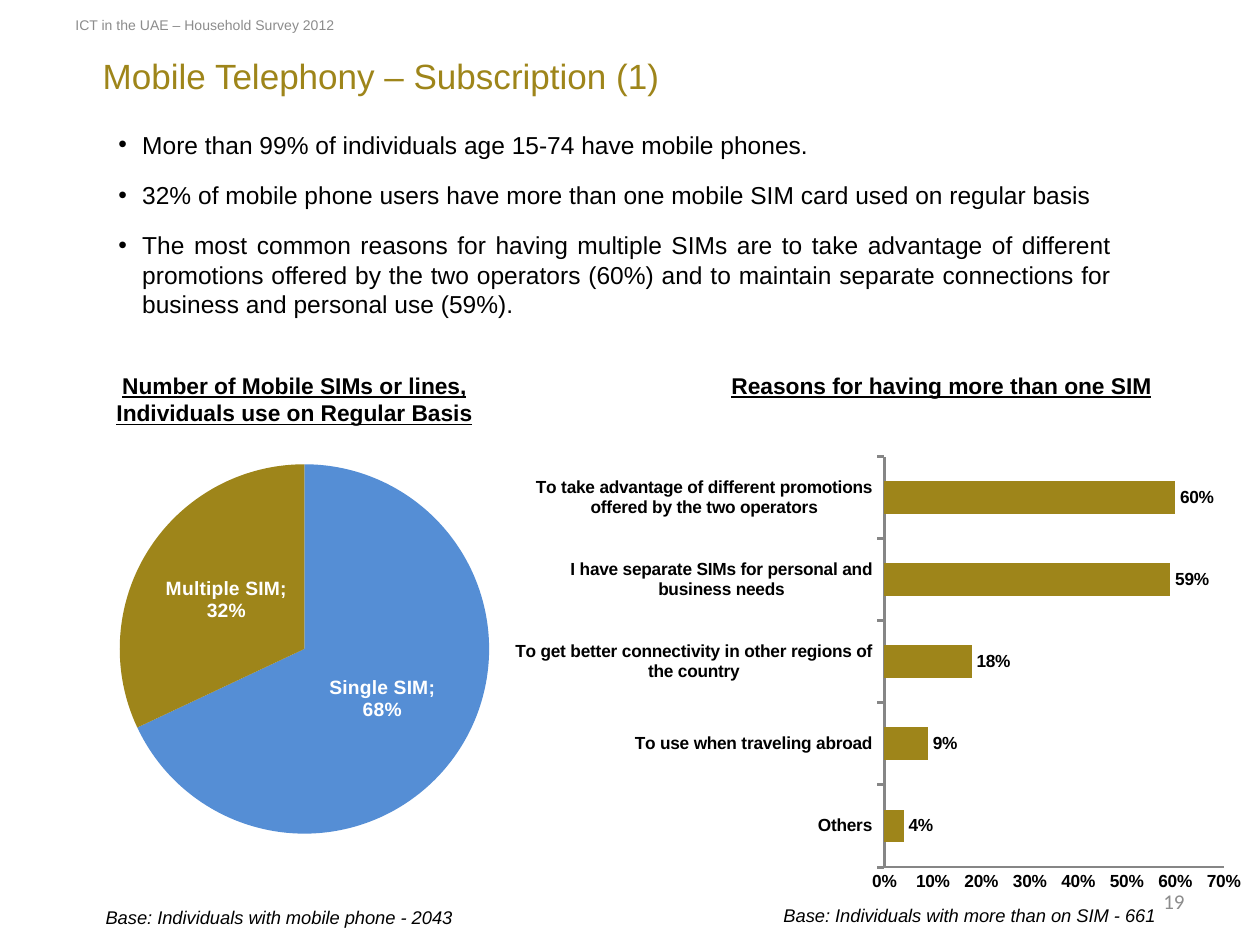
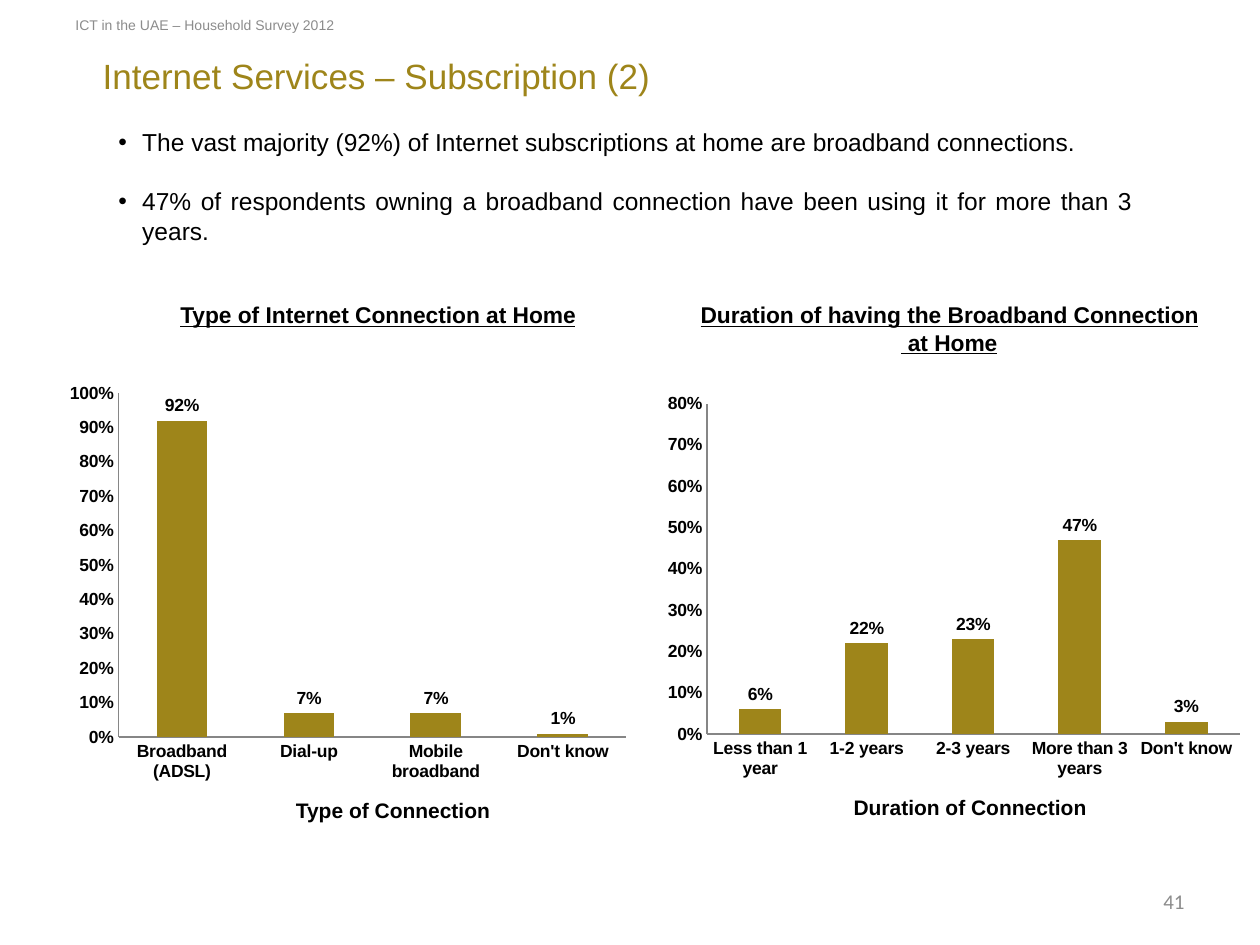
"""Build two survey slides on mobile and Internet subscriptions."""
from pptx import Presentation
from pptx import util as u
from pptx.chart.data import CategoryChartData
from pptx.dml.color import RGBColor
from pptx.enum import chart as ch, text as tx
from pptx.oxml import ns, xmlchemy as xc

GOLD, BLUE, GREY, AXIS = "9E851A", "558ED5", "8C8C8C", "868686"
BLACK, WHITE = "000000", "FFFFFF"
COLS, ROWS = 100, 75
LEFT, MID, RIGHT, FULL = (tx.PP_ALIGN.LEFT, tx.PP_ALIGN.CENTER,
                          tx.PP_ALIGN.RIGHT, tx.PP_ALIGN.JUSTIFY)
HEAD = dict(size=13, bold=True, line=True, align=MID)
NAME = dict(size=12, bold=True, align=MID)
BASE = dict(size=10.5, ital=True)


def rgb(code):
    """Turn a hex string into a colour."""
    return RGBColor.from_string(code)


def node(tag, **attrs):
    """Make an XML element with attributes."""
    item = xc.OxmlElement(tag)
    for key, val in attrs.items():
        item.set(key, str(val))
    return item


def style(font, size, color=BLACK, bold=False, face="Arial"):
    """Format a font."""
    font.name, font.size, font.bold = face, u.Pt(size), bold
    font.color.rgb = rgb(color)


def write(frame, lines, size=14, color=BLACK, bold=False, ital=False, line=False,
          face="Arial", align=LEFT, mid=False, bullet=False, after=0):
    """Fill a text frame with formatted paragraphs."""
    frame.word_wrap = True
    frame.vertical_anchor = tx.MSO_ANCHOR.MIDDLE if mid else tx.MSO_ANCHOR.TOP
    for i, words in enumerate(lines):
        para = frame.add_paragraph() if i else frame.paragraphs[0]
        if bullet:
            prop = para._p.get_or_add_pPr()
            dent = u.Inches(0.19)
            prop.set("marL", str(dent))
            prop.set("indent", str(-dent))
            prop.append(node("a:buFont", typeface="Arial"))
            prop.append(node("a:buChar", char="•"))
        para.alignment, para.space_before = align, u.Pt(0)
        para.space_after = u.Pt(after)
        run = para.add_run()
        run.text = words
        style(run.font, size, color, bold, face)
        run.font.italic, run.font.underline = ital, line


class Deck:
    """Hold the shared style and the current slide."""

    def __init__(self):
        """Start an empty deck."""
        self.show = Presentation()
        self.show.slide_width, self.show.slide_height = u.Inches(10), u.Inches(7.5)

    def place(self, col, row, wide, high):
        """Turn grid cells into slide lengths."""
        dx, dy = self.show.slide_width / COLS, self.show.slide_height / ROWS
        return [u.Emu(round(n)) for n in (col * dx, row * dy, wide * dx, high * dy)]

    def page(self, title, number):
        """Add a slide with its title, header and number."""
        self.slide = self.show.slides.add_slide(self.show.slide_layouts[5])
        head = self.slide.shapes.title
        head.left, head.top, head.width, head.height = self.place(7.15, 3.5, 80.9, 5)
        write(head.text_frame, [title], size=20, color=GOLD, mid=True)
        self.text((71.7, 69.5, 23.3, 4), number, size=12, color=GREY,
                  face="Calibri", align=RIGHT, mid=True)
        self.text((5, 0, 52.5, 4), "ICT in the UAE – Household Survey 2012",
                  size=8, color=GREY, mid=True)

    def text(self, spot, *lines, **form):
        """Add a text box."""
        box = self.slide.shapes.add_textbox(*self.place(*spot))
        write(box.text_frame, lines, **form)

    def list(self, spot, *lines, after):
        """Add a justified bullet list."""
        self.text(spot, *lines, align=FULL, bullet=True, after=after)

    def chart(self, kind, spot, inner, data):
        """Add a one-series chart with a fixed plot area and labels."""
        table = CategoryChartData(number_format="0%")
        table.categories = list(data)
        table.add_series("Share", list(data.values()))
        chart = self.slide.shapes.add_chart(kind, *self.place(*spot), table).chart
        chart.has_legend = chart.has_title = False
        style(chart.font, 10, bold=True)
        area = chart._chartSpace.chart.plotArea
        for old in area.findall(ns.qn("c:layout")):
            area.remove(old)
        frame, plan = node("c:layout"), node("c:manualLayout")
        frame.append(plan)
        plan.append(node("c:layoutTarget", val="inner"))
        for tag in ("xMode", "yMode"):
            plan.append(node("c:" + tag, val="edge"))
        for tag, val in zip("xywh", inner):
            plan.append(node("c:" + tag, val=val))
        area.insert(0, frame)
        plot = chart.plots[0]
        plot.vary_by_categories = False
        plot.has_data_labels = True
        tags = plot.data_labels
        tags.show_value = True
        tags.number_format, tags.number_format_is_linked = "0%", False
        style(tags.font, 10, bold=True)
        return chart

    def pie(self, spot, inner, data, hues):
        """Add a pie chart with names and shares on its slices."""
        plot = self.chart(ch.XL_CHART_TYPE.PIE, spot, inner, data).plots[0]
        for i, hue in enumerate(hues):
            fill = plot.series[0].points[i].format.fill
            fill.solid()
            fill.fore_color.rgb = rgb(hue)
        tags = plot.data_labels
        tags.show_category_name, tags.show_percentage = True, False
        tags.position = ch.XL_LABEL_POSITION.CENTER
        style(tags.font, 11, WHITE, True)
        mark = node("c:separator")
        mark.text = "; "
        tags._element.find(ns.qn("c:showBubbleSize")).addnext(mark)

    def bars(self, spot, inner, data, top, flat=False):
        """Add a bar or column chart up to a top value."""
        kinds = ch.XL_CHART_TYPE
        kind = kinds.BAR_CLUSTERED if flat else kinds.COLUMN_CLUSTERED
        chart = self.chart(kind, spot, inner, data)
        plot = chart.plots[0]
        plot.gap_width = 150
        plot.data_labels.position = ch.XL_LABEL_POSITION.OUTSIDE_END
        fill = plot.series[0].format.fill
        fill.solid()
        fill.fore_color.rgb = rgb(GOLD)
        cat, val = chart.category_axis, chart.value_axis
        for axis in (cat, val):
            axis.has_major_gridlines = False
            axis.major_tick_mark = axis.minor_tick_mark = ch.XL_TICK_MARK.NONE
            axis.format.line.color.rgb = rgb(AXIS)
            axis.format.line.width = u.Pt(1)
            style(axis.tick_labels.font, 10, bold=True)
        if flat:
            cat.major_tick_mark = ch.XL_TICK_MARK.OUTSIDE
            cat.format.line.width = u.Pt(1.75)
        val.minimum_scale, val.maximum_scale, val.major_unit = 0, top, 0.1
        val.tick_labels.number_format = "0%"
        val.tick_labels.number_format_is_linked = False


def mobile(deck):
    """Build the mobile subscription slide."""
    deck.page("Mobile Telephony – Subscription (1)", "19")
    deck.list((8.4, 9.8, 80.8, 16.2),
              "More than 99% of individuals age 15-74 have mobile phones.",
              "32% of mobile phone users have more than one mobile SIM card used "
              "on regular basis",
              "The most common reasons for having multiple SIMs are to take advantage "
              "of different promotions offered by the two operators (60%) and to "
              "maintain separate connections for business and personal use (59%).",
              after=12)
    deck.text((6.7, 29, 33.3, 5.4),
              "Number of Mobile SIMs or lines, Individuals use on Regular Basis", **HEAD)
    deck.text((55.8, 29, 37.8, 3.2), "Reasons for having more than one SIM", **HEAD)
    deck.pie((3.7, 33.8, 52.2, 32.8), (0.111, 0.093, 0.562, 0.894),
             {"Single SIM": 0.68, "Multiple SIM": 0.32}, (BLUE, GOLD))
    deck.bars((40.9, 33.8, 58.4, 38.7), (0.494, 0.063, 0.468, 0.842), {
        "Others": 0.04,
        "To use when traveling abroad": 0.09,
        "To get better connectivity in other regions of the country": 0.18,
        "I have separate SIMs for personal and business needs": 0.59,
        "To take advantage of different promotions offered by the two operators": 0.6,
    }, top=0.7, flat=True)
    deck.text((7.4, 71.4, 37.3, 2.9), "Base: Individuals with mobile phone - 2043", **BASE)
    deck.text((61.2, 71.3, 37.3, 2.8), "Base: Individuals with more than on SIM - 661",
              **BASE)


def internet(deck):
    """Build the Internet subscription slide."""
    deck.page("Internet Services – Subscription (2)", "41")
    deck.list((8.4, 9.6, 82.5, 10.4),
              "The vast majority (92%) of Internet subscriptions at home are "
              "broadband connections.",
              "47% of respondents owning a broadband connection have been using it "
              "for more than 3 years.", after=17)
    deck.text((12.3, 23.4, 35.4, 3.2), "Type of Internet Connection at Home", **HEAD)
    deck.text((47, 23.4, 56.7, 5.4), "Duration of having the Broadband Connection",
              " at Home", **HEAD)
    deck.bars((50.9, 29.2, 49.1, 39.5), (0.106, 0.072, 0.861, 0.664), {
        "Less than 1 year": 0.06, "1-2 years": 0.22, "2-3 years": 0.23,
        "More than 3 years": 0.47, "Don't know": 0.03}, top=0.8)
    deck.bars((4.2, 27.3, 49.1, 42.4), (0.106, 0.092, 0.821, 0.644), {
        "Broadband (ADSL)": 0.92, "Dial-up": 0.07, "Mobile broadband": 0.07,
        "Don't know": 0.01}, top=1)
    deck.text((13.5, 62.8, 35.4, 3), "Type of Connection", **NAME)
    deck.text((59.3, 62.6, 35.4, 3), "Duration of Connection", **NAME)


def main():
    """Build and save the deck."""
    deck = Deck()
    mobile(deck)
    internet(deck)
    deck.show.save("out.pptx")


if __name__ == "__main__":
    main()
